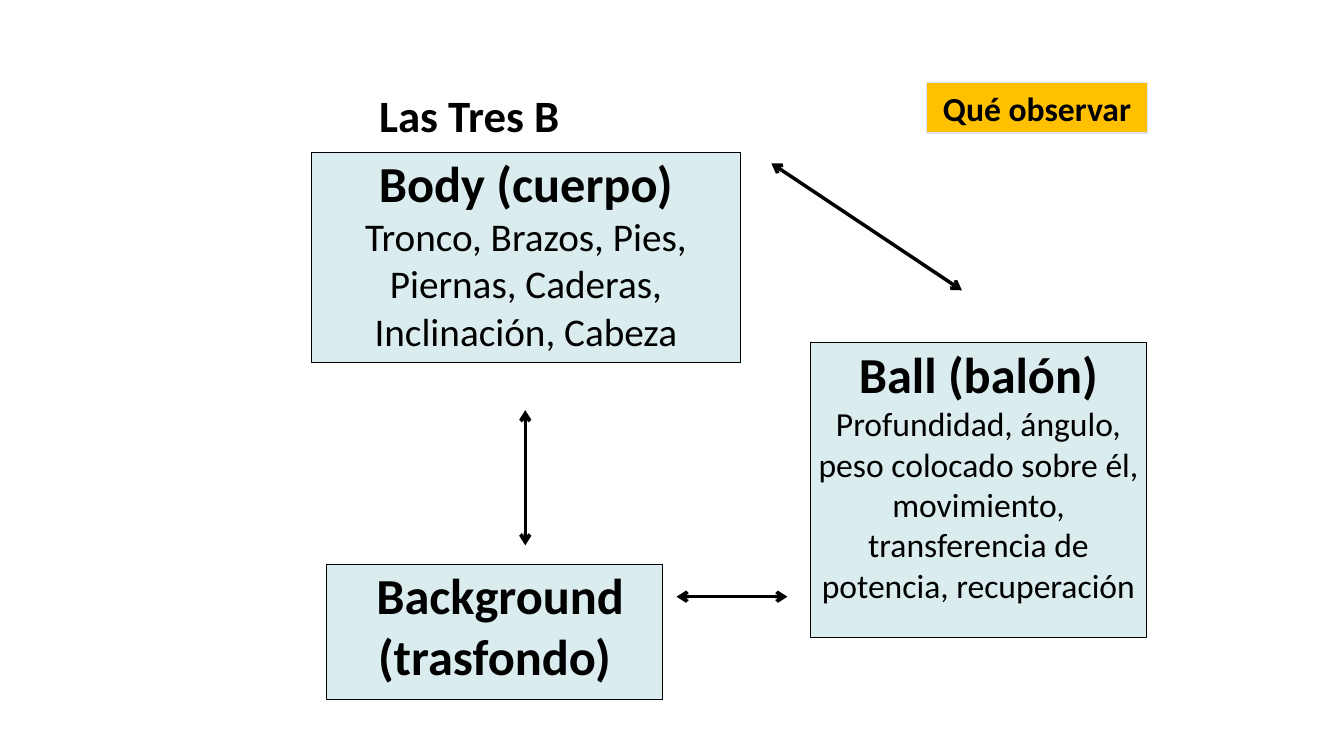
from pptx import Presentation
from pptx.dml.color import RGBColor
from pptx.enum.shapes import MSO_CONNECTOR as LINE, MSO_SHAPE as SHAPE
from pptx.enum.text import MSO_ANCHOR as ANCHOR, PP_ALIGN as ALIGN
from pptx.oxml.ns import qn
from pptx.util import Inches, Pt
from lxml.etree import SubElement

COLORS = {"ink": "000000", "pale": "DAECEE", "gold": "FFC000", "edge": "DAE3F3"}


def color(name):
    return RGBColor.from_string(COLORS[name])


def add_box(place, fill, edge, lines, align):
    box = slide.shapes.add_shape(SHAPE.RECTANGLE, *map(Inches, place))
    box.shadow.inherit = False
    box.fill.solid()
    box.fill.fore_color.rgb = color(fill)
    box.line.color.rgb = color(edge)
    box.line.width = Pt(0.75)
    frame = box.text_frame
    frame.word_wrap = True
    for i, (text, size, bold) in enumerate(lines):
        para = frame.add_paragraph() if i else frame.paragraphs[0]
        para.text = text
        para.alignment = align
        para.font.name = "Calibri"
        para.font.size = Pt(size)
        para.font.bold = bold
        para.font.color.rgb = color("ink")
    return frame


deck = Presentation()
deck.slide_width, deck.slide_height = Inches(13.33), Inches(7.5)
slide = deck.slides.add_slide(deck.slide_layouts[5])

# Title
title = slide.shapes.title
title.left, title.top = Inches(3.66), Inches(0.82)
title.width, title.height = Inches(4), Inches(0.64)
title.text_frame.vertical_anchor = ANCHOR.MIDDLE
head = title.text_frame.paragraphs[0]
head.text = "Las Tres B"
head.alignment = ALIGN.LEFT
head.font.name = "Calibri"
head.font.size = Pt(32)
head.font.bold = True
head.font.color.rgb = color("ink")

# The three B boxes
boxes = [
    ((3.24, 5.6, 3.33, 1.34),
     [(" Background", 36, True), ("(trasfondo)", 36, True)]),
    ((8.04, 3.4, 3.33, 2.92),
     [("Ball (balón)", 36, True),
      ("Profundidad, ángulo, peso colocado sobre él, movimiento, "
       "transferencia de potencia, recuperación", 24, False)]),
    ((3.09, 1.51, 4.25, 2.09),
     [("Body (cuerpo)", 36, True),
      ("Tronco, Brazos, Pies, Piernas, Caderas, Inclinación, Cabeza", 28, False)]),
]
for place, lines in boxes:
    frame = add_box(place, "pale", "ink", lines, ALIGN.CENTER)
    frame.vertical_anchor = ANCHOR.TOP
    frame.margin_left = frame.margin_right = 0
    frame.margin_top = frame.margin_bottom = 0

# Label
label = add_box((9.19, 0.82, 2.19, 0.5), "gold", "edge",
                [("Qué observar", 24, True)], ALIGN.CENTER)
label.vertical_anchor = ANCHOR.MIDDLE
label.word_wrap = False

# Two-way arrows between the boxes
arrows = [(5.21, 4.07, 5.21, 5.41), (6.71, 5.92, 7.81, 5.92), (7.65, 1.62, 9.54, 2.88)]
for ends in arrows:
    arrow = slide.shapes.add_connector(LINE.STRAIGHT, *map(Inches, ends))
    arrow.line.color.rgb = color("ink")
    arrow.line.width = Pt(2.5)
    props = arrow.element.find(qn("p:spPr"))
    for tag in ("a:headEnd", "a:tailEnd"):
        SubElement(props.find(qn("a:ln")), qn(tag), type="arrow")
    SubElement(props, qn("a:effectLst"))

deck.save("out.pptx")
